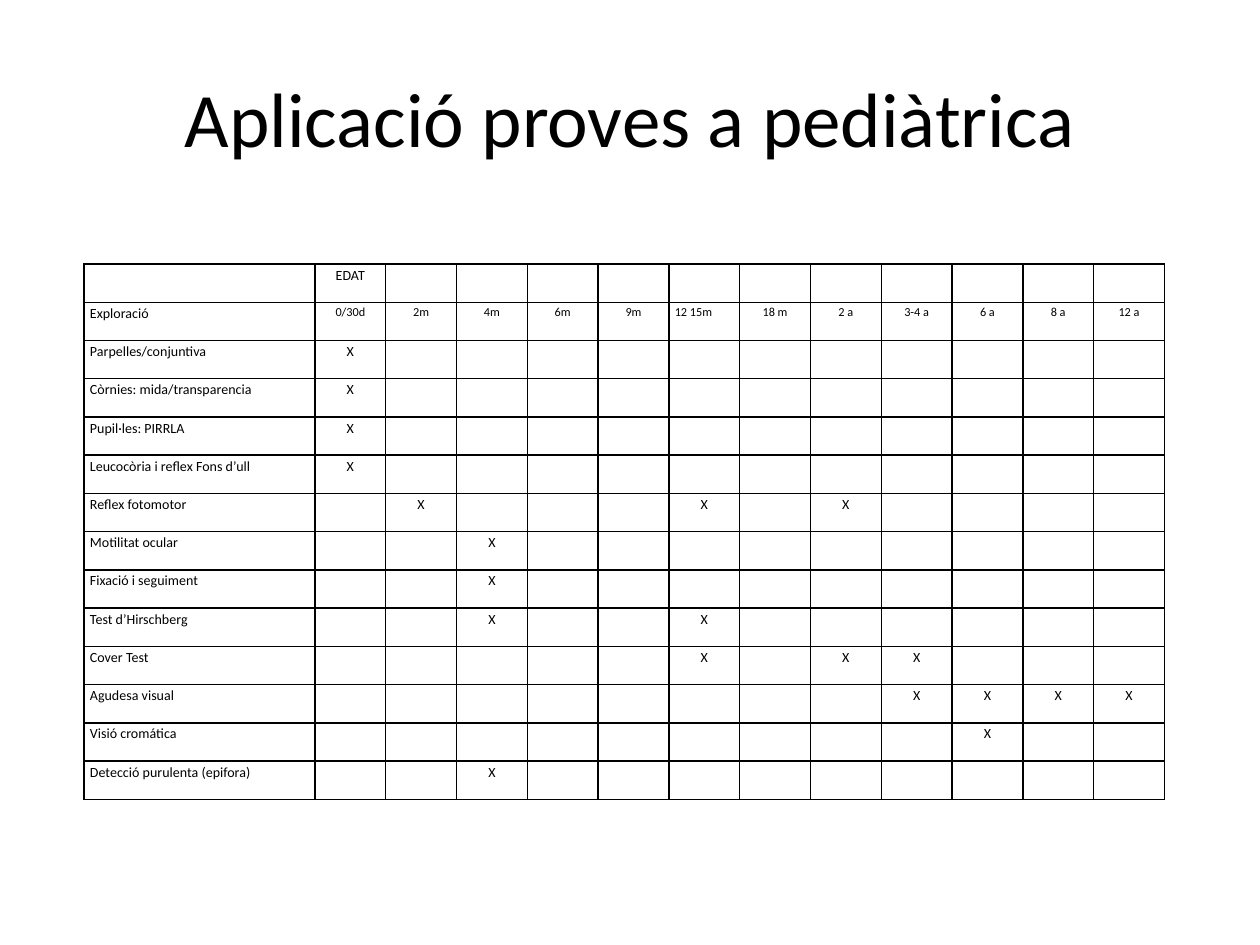
from dataclasses import dataclass

from lxml import etree
from pptx import Presentation
from pptx.dml.color import RGBColor
from pptx.enum.text import MSO_ANCHOR, PP_ALIGN
from pptx.oxml.ns import qn
from pptx.table import Table, _Cell
from pptx.text.text import _Paragraph
from pptx.util import Emu, Pt

EMU_PER_PX = 914400 / 126
BLACK = RGBColor(0, 0, 0)
FONT = "Calibri"
LEFT, CENTER = PP_ALIGN.LEFT, PP_ALIGN.CENTER
MIDDLE = MSO_ANCHOR.MIDDLE
BLANK_LAYOUT = 6

TABLE_LEFT, TABLE_TOP, TABLE_WIDTH, TABLE_HEIGHT = 84, 264, 1081, 536
LABEL_WIDTH = 231
CELL_MARGIN = 6
BODY_SIZE, AGE_SIZE = 8, 7

TITLE = "Aplicació proves a pediàtrica"
AGE_HEADING = "EDAT"
TEST_HEADING = "Exploració"
AGES = ("0/30d", "2m", "4m", "6m", "9m", "12 15m", "18 m",
        "2 a", "3-4 a", "6 a", "8 a", "12 a")
LEFT_ALIGNED_AGE = "12 15m"
MARK = "X"


@dataclass(frozen=True)
class Test:
    name: str
    ages: tuple[str, ...]


TESTS = (
    Test("Parpelles/conjuntiva", ("0/30d",)),
    Test("Còrnies: mida/transparencia", ("0/30d",)),
    Test("Pupil·les: PIRRLA", ("0/30d",)),
    Test("Leucocòria i reflex Fons d’ull", ("0/30d",)),
    Test("Reflex fotomotor", ("2m", "12 15m", "2 a")),
    Test("Motilitat ocular", ("4m",)),
    Test("Fixació i seguiment", ("4m",)),
    Test("Test d’Hirschberg", ("4m", "12 15m")),
    Test("Cover Test", ("12 15m", "2 a", "3-4 a")),
    Test("Agudesa visual", ("3-4 a", "6 a", "8 a", "12 a")),
    Test("Visió cromática", ("6 a",)),
    Test("Detecció purulenta (epifora)", ("4m",)),
)


def px(value: int) -> Emu:
    return Emu(round(value * EMU_PER_PX))


def write(paragraph: _Paragraph, text: str, size: int, alignment: PP_ALIGN) -> None:
    paragraph.text = text
    paragraph.alignment = alignment
    for run in paragraph.runs:
        run.font.name = FONT
        run.font.size = Pt(size)
        run.font.color.rgb = BLACK


def add_borders(cell: _Cell) -> None:
    """Draw the four cell sides, placed before the fill as the schema asks."""
    properties = cell._tc.get_or_add_tcPr()
    for position, side in enumerate(("a:lnL", "a:lnR", "a:lnT", "a:lnB")):
        line = etree.Element(qn(side), w=str(Pt(1)))
        fill = etree.SubElement(line, qn("a:solidFill"))
        etree.SubElement(fill, qn("a:srgbClr"), val=str(BLACK))
        properties.insert(position, line)


def fill_cell(cell: _Cell, text: str, size: int, alignment: PP_ALIGN) -> None:
    cell.margin_left = cell.margin_right = px(CELL_MARGIN)
    cell.margin_top = cell.margin_bottom = 0
    cell.fill.background()
    add_borders(cell)
    paragraph = cell.text_frame.paragraphs[0]
    write(paragraph, text, size, alignment)
    paragraph.line_spacing = 1.15
    if not text:
        # An empty cell takes its line height from the end mark.
        etree.SubElement(paragraph._p, qn("a:endParaRPr"), sz=str(size * 100))


def size_grid(table: Table) -> None:
    table.columns[0].width = px(LABEL_WIDTH)
    for column in list(table.columns)[1:]:
        column.width = Emu(px(TABLE_WIDTH - LABEL_WIDTH) // len(AGES))
    for row in table.rows:
        row.height = Emu(px(TABLE_HEIGHT) // len(table.rows))


def add_test_table(slide) -> None:
    rows = [
        ["", AGE_HEADING] + [""] * (len(AGES) - 1),
        [TEST_HEADING, *AGES],
    ]
    for test in TESTS:
        rows.append([test.name] + [MARK if age in test.ages else "" for age in AGES])

    table = slide.shapes.add_table(
        len(rows), len(AGES) + 1,
        px(TABLE_LEFT), px(TABLE_TOP), px(TABLE_WIDTH), px(TABLE_HEIGHT),
    ).table
    table.first_row = table.horz_banding = False
    size_grid(table)
    for row_index, row in enumerate(rows):
        for column_index, text in enumerate(row):
            is_left = column_index == 0 or text == LEFT_ALIGNED_AGE
            fill_cell(
                table.cell(row_index, column_index), text,
                AGE_SIZE if text in AGES else BODY_SIZE,
                LEFT if is_left else CENTER,
            )


def add_title(slide) -> None:
    title = slide.shapes.add_textbox(px(63), px(38), px(1134), px(157))
    title.text_frame.word_wrap = True
    title.text_frame.vertical_anchor = MIDDLE
    write(title.text_frame.paragraphs[0], TITLE, 44, CENTER)


def main() -> None:
    presentation = Presentation()
    presentation.slide_width, presentation.slide_height = px(1260), px(945)
    slide = presentation.slides.add_slide(presentation.slide_layouts[BLANK_LAYOUT])
    add_title(slide)
    add_test_table(slide)
    presentation.save("out.pptx")


if __name__ == "__main__":
    main()
